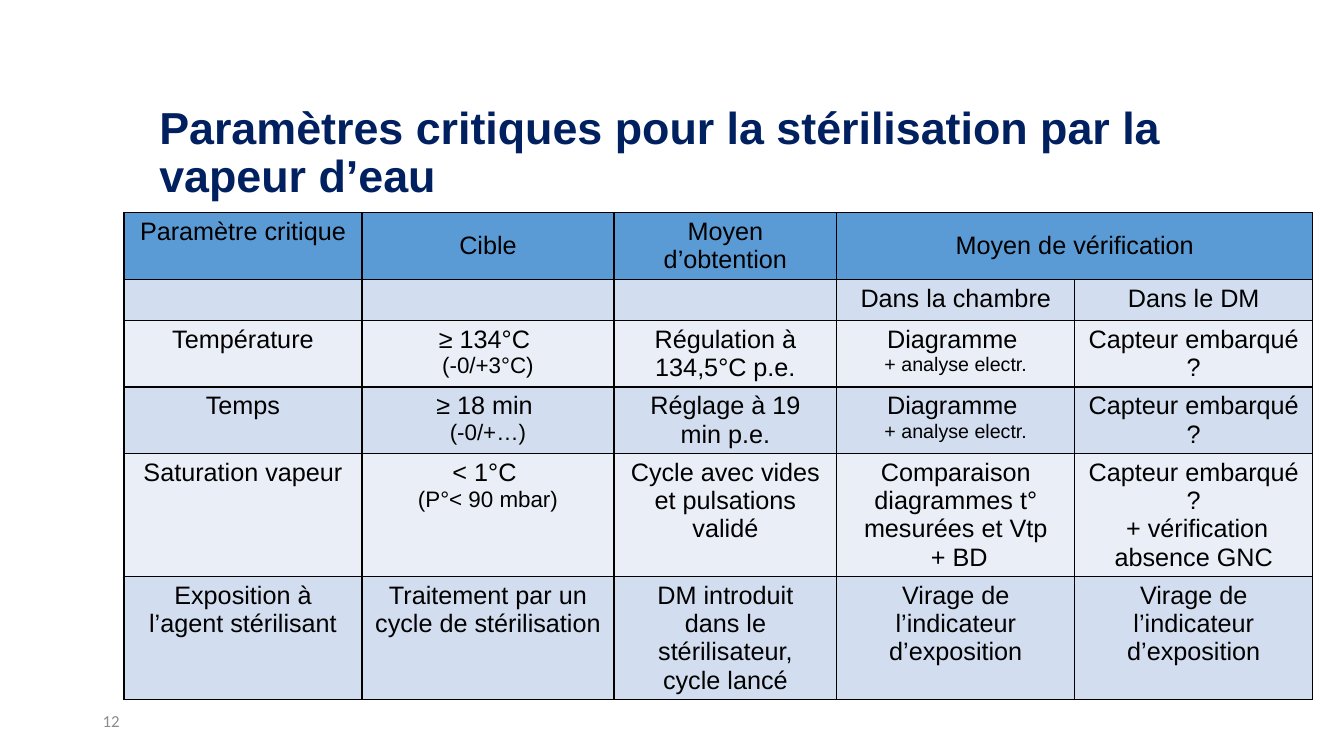
from lxml import etree
from pptx import Presentation, util as u
from pptx.dml.color import RGBColor
from pptx.enum import text
from pptx.oxml.ns import qn

theme = {
    "title": RGBColor.from_string("002060"),
    "ink": RGBColor.from_string("000000"),
    "number": RGBColor.from_string("8C8C8C"),
    "header": RGBColor.from_string("5B9BD5"),
    "bands": [RGBColor.from_string(code) for code in ("EAEFF7", "D2DEEF")],
    "sizes": {"title": 32, "body": 18, "target": 16, "note": 14, "number": 12},
}

headings = ["Paramètre critique", "Cible", "Moyen d’obtention", "Moyen de vérification", ""]
subheadings = ["", "", "", "Dans la chambre", "Dans le DM"]
parameters = [
    ["Température", "≥ 134°C \n(-0/+3°C)", "Régulation à 134,5°C p.e.",
     "Diagramme \n+ analyse electr.", "Capteur embarqué ?"],
    ["Temps", "≥ 18 min \n(-0/+…)", "Réglage à 19 min p.e.",
     "Diagramme \n+ analyse electr.", "Capteur embarqué ?"],
    ["Saturation vapeur", "< 1°C \n(P°< 90 mbar)", "Cycle avec vides et pulsations validé",
     "Comparaison diagrammes t° mesurées et Vtp\n + BD",
     "Capteur embarqué ?\n + vérification absence GNC"],
    ["Exposition à l’agent stérilisant", "Traitement par un cycle de stérilisation",
     "DM introduit dans le stérilisateur, cycle lancé",
     "Virage de l’indicateur d’exposition", "Virage de l’indicateur d’exposition"],
]
rows = [headings, subheadings, *parameters]
column_widths = [2.36, 2.5, 2.21, 2.36, 2.36]
row_height = 0.41


def style(paragraph, size, color, face="Arial", bold=False):
    for span in paragraph.runs:
        span.font.name = face
        span.font.size = u.Pt(theme["sizes"][size])
        span.font.color.rgb = color
        span.font.bold = bold


def outline(cell):
    properties = cell._tc.get_or_add_tcPr()
    for position, side in enumerate(("lnL", "lnR", "lnT", "lnB")):
        line = etree.Element(qn(f"a:{side}"), w=str(u.Pt(1)))
        fill = etree.SubElement(line, qn("a:solidFill"))
        etree.SubElement(fill, qn("a:srgbClr"), val=str(theme["ink"]))
        properties.insert(position, line)


deck = Presentation()
deck.slide_width, deck.slide_height = u.Inches(13.33), u.Inches(7.5)
page = deck.slides.add_slide(deck.slide_layouts[5])

title = page.shapes.title
title.left, title.top = u.Inches(1.48), u.Inches(1.26)
title.width, title.height = u.Inches(11.02), u.Inches(0.54)
title.text_frame.text = "Paramètres critiques pour la stérilisation par la vapeur d’eau"
title.text_frame.auto_size = text.MSO_AUTO_SIZE.NONE
title.text_frame.vertical_anchor = text.MSO_ANCHOR.MIDDLE
heading = title.text_frame.paragraphs[0]
heading.alignment = text.PP_ALIGN.LEFT
heading.line_spacing = 0.9
style(heading, "title", theme["title"], bold=True)

frame = page.shapes.add_table(len(rows), len(column_widths), u.Inches(1.23), u.Inches(2.11),
                              u.Inches(sum(column_widths)), u.Inches(row_height * len(rows)))
table = frame.table
table.first_row = table.horz_banding = False
for column, width in zip(table.columns, column_widths):
    column.width = u.Inches(width)

for row_index, words in enumerate(rows):
    table.rows[row_index].height = u.Inches(row_height)
    for column_index, wording in enumerate(words):
        cell = table.cell(row_index, column_index)
        cell.text_frame.text = wording
        cell.margin_left = cell.margin_right = u.Inches(0.13)
        cell.margin_top = cell.margin_bottom = u.Inches(0.05)
        cell.fill.solid()
        cell.fill.fore_color.rgb = theme["bands"][row_index % 2] if row_index else theme["header"]
        outline(cell)
        for paragraph in cell.text_frame.paragraphs:
            paragraph.alignment = text.PP_ALIGN.CENTER
            size = "body"
            if paragraph.text.startswith("("):
                size = "target"
            elif paragraph.text.startswith("+"):
                size = "note"
            style(paragraph, size, theme["ink"])

table.cell(0, 3).merge(table.cell(0, 4))
for column_index in (1, 3):
    table.cell(0, column_index).vertical_anchor = text.MSO_ANCHOR.MIDDLE

number = page.shapes.add_textbox(u.Inches(0.92), u.Inches(6.95), u.Inches(3), u.Inches(0.4))
number.text_frame.word_wrap = True
number.text_frame.vertical_anchor = text.MSO_ANCHOR.MIDDLE
number.text_frame.text = "12"
style(number.text_frame.paragraphs[0], "number", theme["number"], face="Calibri")

# The rows grow to fit their wording
deck.save("out.pptx")
